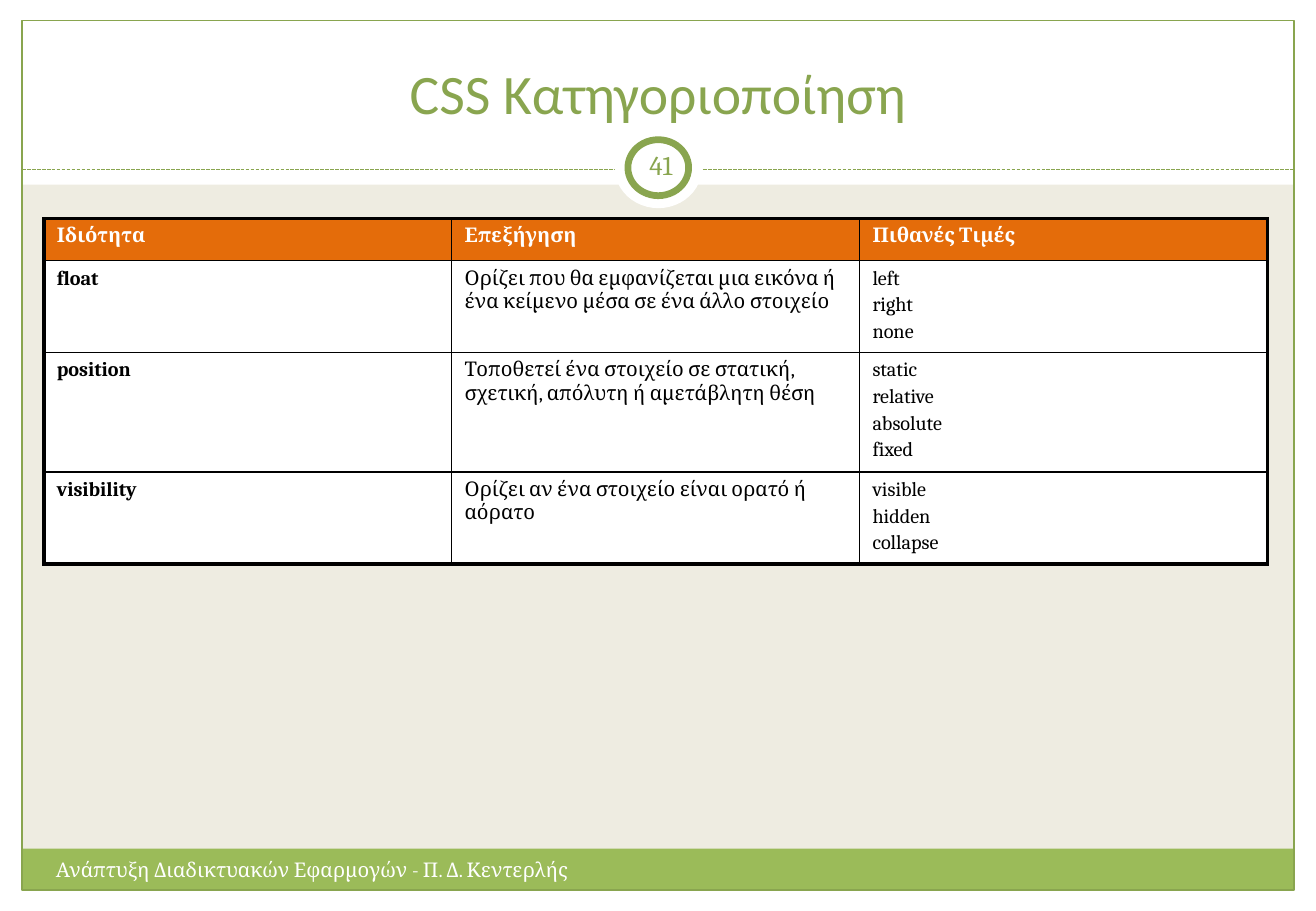
from pptx import Presentation
from pptx.dml.color import RGBColor
from pptx.enum.dml import MSO_LINE
from pptx.enum.shapes import MSO_CONNECTOR, MSO_SHAPE as SHAPE
from pptx.enum.text import MSO_ANCHOR as ANCHOR, PP_ALIGN as ALIGN
from pptx.oxml import parse_xml
from pptx.oxml.ns import nsdecls
from pptx.util import Pt

WHITE = RGBColor(0xFF, 0xFF, 0xFF)
BLACK = RGBColor(0, 0, 0)
SAND = RGBColor(0xEE, 0xEC, 0xE1)
GREEN = RGBColor(0x9B, 0xBB, 0x59)
DARK_GREEN = RGBColor(0x89, 0xA5, 0x4F)
ORANGE = RGBColor(0xE4, 0x6C, 0x0A)

WIDTH, HEIGHT = 780, 540
MARGIN = 13
HEADER_HEIGHT = 109.5
HEADING, BODY = "Calibri", "Cambria"

COLUMNS = ["Ιδιότητα", "Επεξήγηση", "Πιθανές Τιμές"]
PROPERTIES = [
    ("float",
     "Ορίζει που θα εμφανίζεται μια εικόνα ή ένα κείμενο μέσα σε ένα άλλο στοιχείο",
     "left\nright\nnone"),
    ("position",
     "Τοποθετεί ένα στοιχείο σε στατική, σχετική, απόλυτη ή αμετάβλητη θέση",
     "static\nrelative\nabsolute\nfixed"),
    ("visibility",
     "Ορίζει αν ένα στοιχείο είναι ορατό ή αόρατο",
     "visible\nhidden\ncollapse"),
]
ROW_HEIGHTS = [25, 53.4, 69.8, 53.4]


def add_block(page, kind, box, fill=None, line=None, weight=0.75):
    block = page.shapes.add_shape(kind, *map(Pt, box))
    block.shadow.inherit = False
    if fill is None:
        block.fill.background()
    else:
        block.fill.solid()
        block.fill.fore_color.rgb = fill
    if line is None:
        block.line.fill.background()
    else:
        block.line.color.rgb = line
        block.line.width = Pt(weight)
    return block


def style_font(para, name, size, color, bold=False):
    font = para.font
    font.name, font.size, font.bold = name, Pt(size), bold
    font.color.rgb = color


def add_label(page, box, text, name, size, color,
              align=ALIGN.LEFT, anchor=ANCHOR.TOP, inset=None):
    frame = page.shapes.add_textbox(*map(Pt, box)).text_frame
    frame.word_wrap = True
    frame.vertical_anchor = anchor
    if inset is not None:
        frame.margin_left = frame.margin_right = Pt(inset)
        frame.margin_top = frame.margin_bottom = Pt(inset)
    para = frame.paragraphs[0]
    para.text, para.alignment = text, align
    style_font(para, name, size, color)


def draw_border(page, box):
    left, top, width, height = box
    right, bottom = left + width, top + height
    # White margins and header band
    for band in [(0, bottom, WIDTH, HEIGHT - bottom), (0, 0, WIDTH, HEADER_HEIGHT),
                 (0, 0, left, HEIGHT), (right, 0, WIDTH - right, HEIGHT)]:
        add_block(page, SHAPE.RECTANGLE, band, WHITE)
    # Footer bar
    add_block(page, SHAPE.RECTANGLE, (left, bottom - 24.5, width, 24.5), GREEN)
    # Outline
    add_block(page, SHAPE.RECTANGLE, box, line=DARK_GREEN)
    # Dashed rule
    rule = page.shapes.add_connector(
        MSO_CONNECTOR.STRAIGHT, Pt(left), Pt(100.5), Pt(right), Pt(100.5))
    rule.line.color.rgb = DARK_GREEN
    rule.line.width = Pt(0.75)
    rule.line.dash_style = MSO_LINE.SQUARE_DOT
    rule._element.spPr.append(parse_xml(f"<a:effectLst {nsdecls('a')}/>"))
    # Footer text
    add_label(page, (left + 13, bottom - 23.1, 364, 29),
              "Ανάπτυξη Διαδικτυακών Εφαρμογών - Π. Δ. Κεντερλής", BODY, 12, WHITE)


def draw_title(page, box):
    add_label(page, box, "CSS Κατηγοριοποίηση", HEADING, 33, DARK_GREEN,
              ALIGN.CENTER, ANCHOR.BOTTOM)


def draw_page_number(page, box):
    left, top, width, height = box
    # White halo and green ring
    add_block(page, SHAPE.OVAL, box, WHITE)
    add_block(page, SHAPE.OVAL, (left + 7.9, top + 7.4, width - 15.8, height - 14.8),
              WHITE, DARK_GREEN, 4)
    add_label(page, (left + 7.9, top + 5, 39, 34.5), "41", BODY, 16, DARK_GREEN,
              ALIGN.CENTER, ANCHOR.MIDDLE, 3.6)


def set_borders(cell, weights):
    props = cell._tc.get_or_add_tcPr()
    for place, (side, weight) in enumerate(zip("LRTB", weights)):
        props.insert(place, parse_xml(
            f'<a:ln{side} {nsdecls("a")} w="{Pt(weight)}"><a:solidFill>'
            f'<a:srgbClr val="{BLACK}"/></a:solidFill></a:ln{side}>'))


def draw_table(page, box):
    rows = [COLUMNS, *PROPERTIES]
    last_row, last_col = len(rows) - 1, len(COLUMNS) - 1
    table = page.shapes.add_table(len(rows), len(COLUMNS), *map(Pt, box)).table
    table.first_row = table.horz_banding = False
    for column in table.columns:
        column.width = Pt(box[2] / len(COLUMNS))
    for r, (texts, height) in enumerate(zip(rows, ROW_HEIGHTS)):
        table.rows[r].height = Pt(height)
        for c, text in enumerate(texts):
            cell = table.cell(r, c)
            cell.text = text
            cell.margin_left = cell.margin_right = Pt(7.7)
            cell.margin_top = cell.margin_bottom = Pt(3.6)
            cell.fill.solid()
            cell.fill.fore_color.rgb = WHITE if r else ORANGE
            for para in cell.text_frame.paragraphs:
                para.space_before = Pt(2)
                style_font(para, BODY, 12, BLACK if r else WHITE, r == 0 or c == 0)
            # Heavy outer edge, thin inner lines
            outer = (c == 0, c == last_col, r == 0, r == last_row)
            set_borders(cell, [2.25 if edge else 1 for edge in outer])


def main():
    deck = Presentation()
    deck.slide_width, deck.slide_height = Pt(WIDTH), Pt(HEIGHT)
    page = deck.slides.add_slide(deck.slide_layouts[6])
    page.background.fill.solid()
    page.background.fill.fore_color.rgb = SAND
    draw_border(page, (MARGIN, 12, WIDTH - 2 * MARGIN, 515.6))
    draw_page_number(page, (364.3, 75.4, 51.8, 48))
    draw_title(page, (26, 18, 728, 59.8))
    draw_table(page, (26, 129.6, 725.25, sum(ROW_HEIGHTS)))
    deck.save("out.pptx")


if __name__ == "__main__":
    main()
